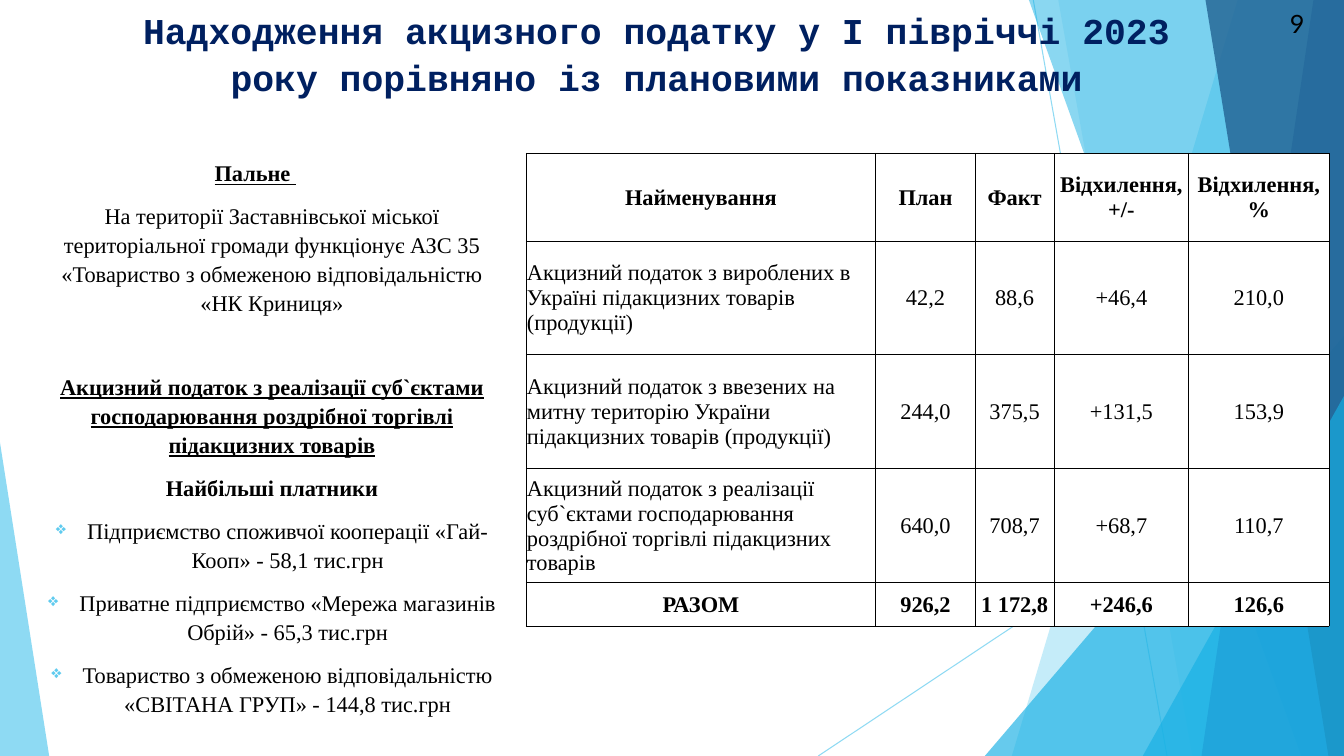
from lxml.etree import SubElement
from pptx import Presentation
from pptx.dml.color import RGBColor
from pptx.enum.shapes import MSO_CONNECTOR, MSO_SHAPE
from pptx.enum.text import MSO_ANCHOR, PP_ALIGN
from pptx.oxml import parse_xml
from pptx.oxml.ns import nsdecls, qn
from pptx.util import Cm, Pt

WIDTH, HEIGHT = 33.87, 19.05
BLACK = RGBColor(0x00, 0x00, 0x00)
WHITE = RGBColor(0xFF, 0xFF, 0xFF)
NAVY = RGBColor(0x00, 0x20, 0x60)
SKY = RGBColor(0x5F, 0xCB, 0xEF)
AZURE = RGBColor(0x17, 0xB0, 0xE4)
BLUE = RGBColor(0x2E, 0x83, 0xC3)
DEEP = RGBColor(0x22, 0x62, 0x92)

# Backdrop, from back to front
RAYS = [(26.04, 0, 29.41, HEIGHT), (WIDTH, 10.24, 20.62, HEIGHT)]
# Bands reach the right edge: ("band", top left x, bottom left x, colour, opacity %)
# Wedges stand on the bottom edge: ("wedge", (left, top, width, apex), colour, opacity %)
BACKDROP = [
    ("band", (31.19, 25.5), SKY, 36),
    ("band", (26.67, 30.05), SKY, 20),
    ("wedge", (24.82, 8.46, 9.05, 1), AZURE, 66),
    ("band", (25.93, 32.79), AZURE, 50),
    ("band", (33.1, 30.28), BLUE, 70),
    ("band", (30.38, 33.48), DEEP, 80),
    ("wedge", (28.8, 9.98, 5.07, 1), AZURE, 66),
    ("wedge", (0, 11.15, 1.24, 0), SKY, 70),
]

TITLE = "Надходження акцизного податку у І півріччі 2023 року порівняно із плановими показниками"
TITLE_FONT = {"name": "Courier New", "size": Pt(26), "bold": True}
SERIF = {"name": "Times New Roman", "size": Pt(16)}
STRONG = SERIF | {"bold": True}
HEADING = STRONG | {"underline": True}
PAGE_FONT = {"name": "Lato", "size": Pt(18)}

# (text, font, space before in points, bulleted)
NOTES = [
    ("Пальне ", HEADING, 10, False),
    ("На території Заставнівської міської територіальної громади функціонує АЗС 35 "
     "«Товариство з обмеженою відповідальністю «НК Криниця»", SERIF, 10, False),
    ("Акцизний податок з реалізації суб`єктами господарювання роздрібної торгівлі "
     "підакцизних товарів", HEADING, 39, False),
    ("Найбільші платники", STRONG, 10, False),
    ("Підприємство споживчої кооперації «Гай-Кооп» - 58,1 тис.грн", SERIF, 10, True),
    ("Приватне підприємство «Мережа магазинів Обрій» - 65,3 тис.грн", SERIF, 10, True),
    ("Товариство з обмеженою відповідальністю «СВІТАНА ГРУП» - 144,8 тис.грн", SERIF, 10, True),
]
FIRST_HEADING_INDENT = 4.25
BULLET_INDENT = 0.79

ROWS = [
    ("Найменування", "План", "Факт", "Відхилення, +/-", "Відхилення,%"),
    ("Акцизний податок з вироблених в Україні підакцизних товарів (продукції)",
     "42,2", "88,6", "+46,4", "210,0"),
    ("Акцизний податок з ввезених на митну територію України підакцизних товарів (продукції)",
     "244,0", "375,5", "+131,5", "153,9"),
    ("Акцизний податок з реалізації суб`єктами господарювання роздрібної торгівлі "
     "підакцизних товарів", "640,0", "708,7", "+68,7", "110,7"),
    ("РАЗОМ", "926,2", "1 172,8", "+246,6", "126,6"),
]
COLUMN_WIDTHS = [8.81, 2.51, 1.98, 3.4, 3.53]
ROW_HEIGHTS = [2.21, 2.87, 2.87, 2.87, 1.09]


def set_opacity(element, percent):
    for color in element.iter(qn("a:srgbClr")):
        SubElement(color, qn("a:alpha"), val=str(percent * 1000))


def add_span(para, text, font, color):
    span = para.add_run()
    span.text = text
    for name, value in font.items():
        setattr(span.font, name, value)
    span.font.color.rgb = color


def add_box(page, *place):
    frame = page.shapes.add_textbox(*map(Cm, place)).text_frame
    frame.word_wrap = True
    return frame


def add_backdrop(page):
    for ray in RAYS:
        line = page.shapes.add_connector(MSO_CONNECTOR.STRAIGHT, *map(Cm, ray))
        line.line.color.rgb = SKY
        line.line.width = Pt(0.75)
        properties = line._element.spPr
        set_opacity(properties, 70)
        SubElement(properties, qn("a:effectLst"))
    for kind, place, color, opacity in BACKDROP:
        if kind == "band":
            top_x, bottom_x = place
            outline = page.shapes.build_freeform(Cm(top_x), 0)
            corners = [(WIDTH, 0), (WIDTH, HEIGHT), (bottom_x, HEIGHT)]
            outline.add_line_segments([(Cm(x), Cm(y)) for x, y in corners])
            shape = outline.convert_to_shape()
        else:
            left, top, width, apex = place
            shape = page.shapes.add_shape(MSO_SHAPE.ISOSCELES_TRIANGLE, Cm(left), Cm(top),
                                          Cm(width), Cm(HEIGHT - top))
            shape.adjustments[0] = apex
        shape.shadow.inherit = False
        shape.fill.solid()
        shape.fill.fore_color.rgb = color
        shape.line.fill.background()
        set_opacity(shape._element.spPr, opacity)


def add_notes(page):
    frame = add_box(page, 0.91, 3.84, 11.89, 13.69)
    for index, (text, font, gap, bulleted) in enumerate(NOTES):
        para = frame.add_paragraph() if index else frame.paragraphs[0]
        para.alignment = PP_ALIGN.CENTER if index else PP_ALIGN.LEFT
        para.line_spacing = 1.08
        para.space_before = Pt(gap)
        add_span(para, text, font, BLACK)
        properties = para._p.get_or_add_pPr()
        if index == 0:
            properties.set("marL", str(Cm(FIRST_HEADING_INDENT)))
        if bulleted:
            properties.set("marL", str(Cm(BULLET_INDENT)))
            properties.set("indent", str(-Cm(BULLET_INDENT)))
            SubElement(SubElement(properties, qn("a:buClr")), qn("a:srgbClr"), val=str(SKY))
            SubElement(properties, qn("a:buSzPct"), val="80000")
            SubElement(properties, qn("a:buChar"), char="❖")


def add_borders(cell):
    properties = cell._tc.get_or_add_tcPr()
    for index, side in enumerate("LRTB"):
        properties.insert(index, parse_xml(
            f'<a:ln{side} {nsdecls("a")} w="{Pt(0.5)}"><a:solidFill>'
            f'<a:srgbClr val="{BLACK}"/></a:solidFill></a:ln{side}>'))


def add_tax_table(page):
    table = page.shapes.add_table(len(ROWS), len(COLUMN_WIDTHS), Cm(13.26), Cm(3.86),
                                  Cm(sum(COLUMN_WIDTHS)), Cm(sum(ROW_HEIGHTS))).table
    table.first_row = table.horz_banding = False
    for column, width in zip(table.columns, COLUMN_WIDTHS):
        column.width = Cm(width)
    for row, height in zip(table.rows, ROW_HEIGHTS):
        row.height = Cm(height)
    cell_format = {"margin_left": Cm(0.02), "margin_right": Cm(0.02), "margin_top": Cm(0.02),
                   "margin_bottom": 0, "vertical_anchor": MSO_ANCHOR.MIDDLE}
    for row_index, row in enumerate(ROWS):
        strong = row_index in (0, len(ROWS) - 1)
        for column_index, text in enumerate(row):
            cell = table.cell(row_index, column_index)
            for name, value in cell_format.items():
                setattr(cell, name, value)
            cell.fill.solid()
            cell.fill.fore_color.rgb = WHITE
            add_borders(cell)
            para = cell.text_frame.paragraphs[0]
            para.alignment = PP_ALIGN.CENTER if strong or column_index else PP_ALIGN.LEFT
            add_span(para, text, STRONG if strong else SERIF, BLACK)


def main():
    deck = Presentation()
    deck.slide_width, deck.slide_height = Cm(WIDTH), Cm(HEIGHT)
    page = deck.slides.add_slide(deck.slide_layouts[6])
    add_backdrop(page)
    title = add_box(page, 3.1, 0, 26.92, 1.52).paragraphs[0]
    title.alignment = PP_ALIGN.CENTER
    title.line_spacing = 1.08
    add_span(title, TITLE, TITLE_FONT, NAVY)
    add_notes(page)
    add_span(add_box(page, 32.26, 0.08, 1.55, 1.02).paragraphs[0], "9", PAGE_FONT, BLACK)
    add_tax_table(page)
    deck.save("out.pptx")


if __name__ == "__main__":
    main()
